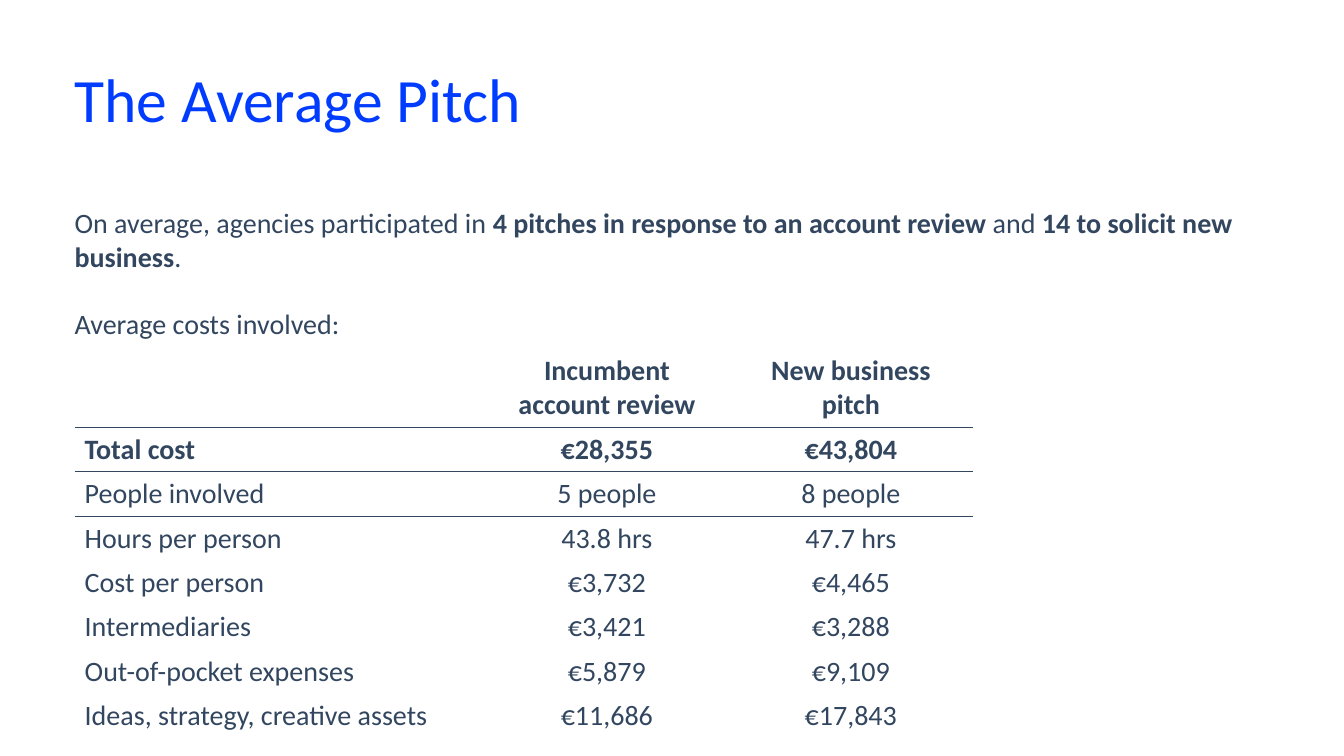
from dataclasses import dataclass

from lxml.etree import SubElement
from pptx import Presentation
from pptx.dml.color import RGBColor
from pptx.enum.text import MSO_ANCHOR, MSO_AUTO_SIZE, PP_ALIGN
from pptx.oxml.ns import qn
from pptx.util import Emu, Pt

FONT = "Calibri"
COLOURS = {"title": "003CFF", "text": "32465F"}
NO_GRID_STYLE = "{2D5ABB26-0587-4C30-8999-92F81FD0307C}"
TEXT_SIZE = 20
COLUMN_WIDTHS = (407, 242, 242)
HEADER_HEIGHT, ROW_HEIGHT = 75, 43


@dataclass(frozen=True)
class Box:
    left: int
    top: int
    width: int
    height: int


@dataclass(frozen=True)
class CostRow:
    label: str
    incumbent: str
    new_business: str
    bold: bool = False
    ruled: bool = False


TITLE_BOX = Box(74, 72, 1065, 63)
BODY_BOX = Box(74, 204, 1186, 172)
INTRO = (
    ("On average, agencies participated in ", False),
    ("4 pitches in response to an account review", True),
    (" and ", False),
    ("14 to solicit new business", True),
    (".", False),
)
COSTS = (
    CostRow("", "Incumbent account review", "New business pitch", bold=True, ruled=True),
    CostRow("Total cost", "€28,355", "€43,804", bold=True, ruled=True),
    CostRow("People involved", "5 people", "8 people", ruled=True),
    CostRow("Hours per person", "43.8 hrs", "47.7 hrs"),
    CostRow("Cost per person", "€3,732", "€4,465"),
    CostRow("Intermediaries", "€3,421", "€3,288"),
    CostRow("Out-of-pocket expenses", "€5,879", "€9,109"),
    CostRow("Ideas, strategy, creative assets", "€11,686", "€17,843"),
)
TABLE_BOX = Box(74, 346, sum(COLUMN_WIDTHS), HEADER_HEIGHT + ROW_HEIGHT * (len(COSTS) - 1))


def px(length: int) -> Emu:
    """Convert px, 100 to the inch, into EMU."""
    return Emu(length * 9144)


def set_font(paragraph, size: int, colour: str) -> None:
    paragraph.font.name = FONT
    paragraph.font.size = Pt(size)
    paragraph.font.color.rgb = RGBColor.from_string(COLOURS[colour])


def place(placeholder, box: Box):
    """Move a placeholder and return its text frame without insets."""
    placeholder.left, placeholder.top = px(box.left), px(box.top)
    placeholder.width, placeholder.height = px(box.width), px(box.height)
    frame = placeholder.text_frame
    frame.margin_left = frame.margin_right = frame.margin_top = frame.margin_bottom = 0
    frame.word_wrap = True
    frame.auto_size = MSO_AUTO_SIZE.NONE
    frame.vertical_anchor = MSO_ANCHOR.TOP
    return frame


def add_title(slide) -> None:
    paragraph = place(slide.shapes.title, TITLE_BOX).paragraphs[0]
    paragraph.text = "The Average Pitch"
    paragraph.alignment = PP_ALIGN.LEFT
    paragraph.line_spacing = 0.85
    set_font(paragraph, 44, "title")


def add_body(slide) -> None:
    frame = place(slide.placeholders[1], BODY_BOX)
    intro, costs_lead = frame.paragraphs[0], frame.add_paragraph()
    for text, bold in INTRO:
        run = intro.add_run()
        run.text = text
        run.font.bold = bold
    costs_lead.text = "Average costs involved:"
    for paragraph, space in ((intro, 0), (costs_lead, 24)):
        paragraph.space_before = Pt(space)
        properties = paragraph._p.get_or_add_pPr()
        properties.set("marL", "0")
        properties.set("indent", "0")
        SubElement(properties, qn("a:buNone"))
        set_font(paragraph, TEXT_SIZE, "text")


def rule_below(cell) -> None:
    line = SubElement(cell._tc.get_or_add_tcPr(), qn("a:lnB"), w=str(Pt(1)))
    fill = SubElement(line, qn("a:solidFill"))
    SubElement(fill, qn("a:srgbClr"), val=COLOURS["text"])


def fill_cell(cell, text: str, row: CostRow, alignment: PP_ALIGN) -> None:
    cell.vertical_anchor = MSO_ANCHOR.MIDDLE
    if row.ruled:
        rule_below(cell)
    cell.fill.background()
    paragraph = cell.text_frame.paragraphs[0]
    paragraph.text = text
    paragraph.alignment = alignment
    set_font(paragraph, TEXT_SIZE, "text")
    paragraph.font.bold = row.bold


def add_cost_table(slide) -> None:
    box = TABLE_BOX
    table = slide.shapes.add_table(
        len(COSTS), len(COLUMN_WIDTHS), px(box.left), px(box.top), px(box.width), px(box.height)
    ).table
    table._tbl.tblPr.find(qn("a:tableStyleId")).text = NO_GRID_STYLE
    table.horz_banding = False
    for column, width in zip(table.columns, COLUMN_WIDTHS):
        column.width = px(width)
    for index, row in enumerate(COSTS):
        table.rows[index].height = px(ROW_HEIGHT if index else HEADER_HEIGHT)
        for column, text in enumerate((row.label, row.incumbent, row.new_business)):
            alignment = PP_ALIGN.CENTER if column else PP_ALIGN.LEFT
            fill_cell(table.cell(index, column), text, row, alignment)


def main() -> None:
    presentation = Presentation()
    presentation.slide_width, presentation.slide_height = px(1333), px(750)
    slide = presentation.slides.add_slide(presentation.slide_layouts[1])
    add_title(slide)
    add_body(slide)
    add_cost_table(slide)
    presentation.save("out.pptx")


if __name__ == "__main__":
    main()
